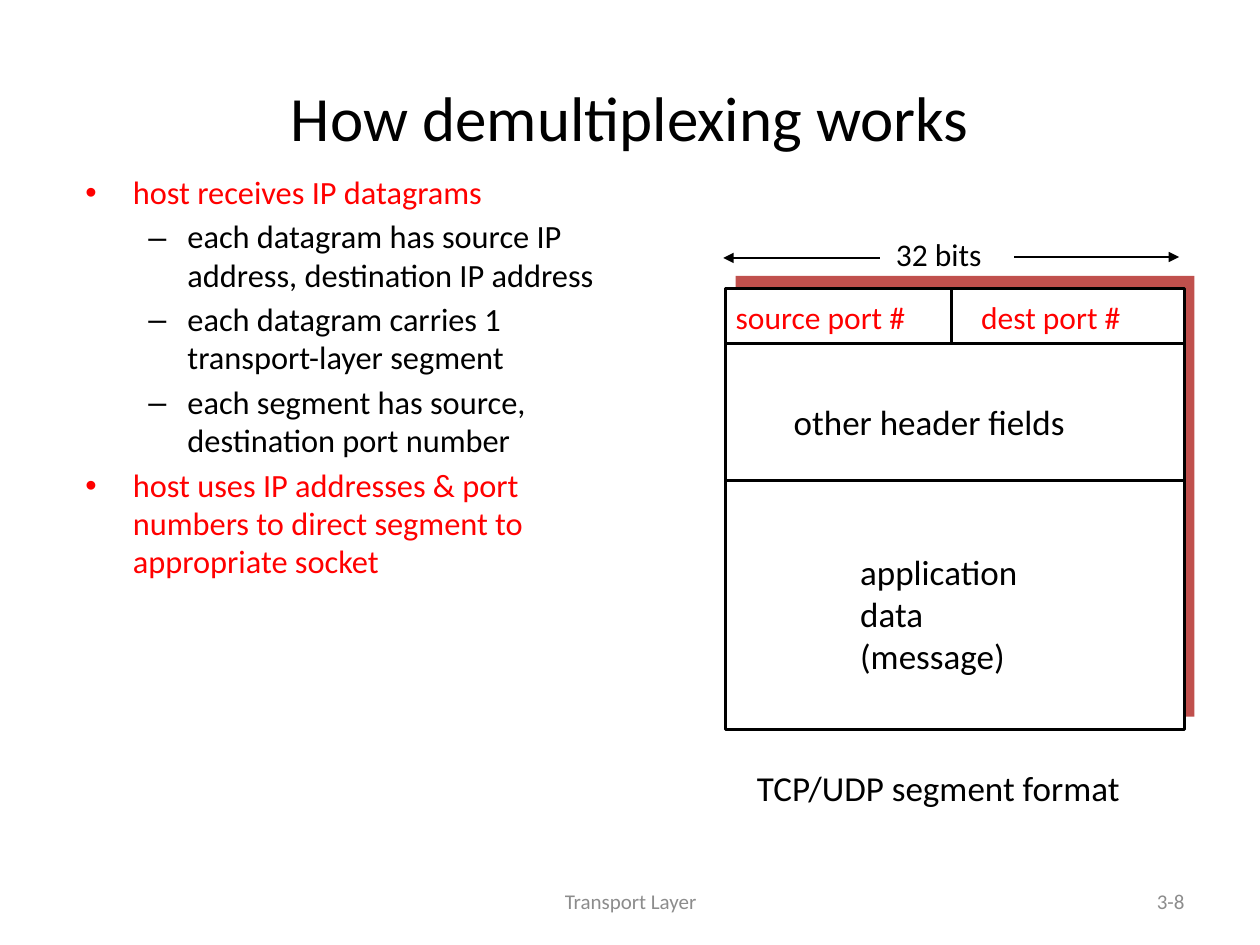
from lxml.etree import SubElement
from pptx import Presentation
from pptx.dml.color import RGBColor
from pptx.enum.shapes import MSO_CONNECTOR, MSO_SHAPE
from pptx.enum.text import MSO_ANCHOR, PP_ALIGN
from pptx.oxml.ns import qn
from pptx.util import Cm, Pt

COLORS = {
    "black": "000000",
    "white": "FFFFFF",
    "red": "FF0000",
    "brick": "C0504D",
    "gray": "8C8C8C",
}


class SlideBuilder:
    font = "Calibri"
    line_width = Pt(1.5)
    # Per outline level: bullet, left indent and hanging indent in cm
    levels = (("•", 0.96, 0.96), ("–", 2.06, 0.79))

    def __init__(self, slide):
        self.slide = slide

    def color(self, name):
        return RGBColor.from_string(COLORS[name])

    def frame(self, left, top, width, height, anchor=MSO_ANCHOR.TOP):
        box = self.slide.shapes.add_textbox(Cm(left), Cm(top), Cm(width), Cm(height))
        box.text_frame.word_wrap = True
        box.text_frame.vertical_anchor = anchor
        return box.text_frame

    def paragraph(self, frame, index, text, size, color):
        paragraph = frame.add_paragraph() if index else frame.paragraphs[0]
        run = paragraph.add_run()
        run.text = text
        run.font.name = self.font
        run.font.size = Pt(size)
        run.font.color.rgb = self.color(color)
        return paragraph

    def text(self, left, top, width, height, lines, size, color="black",
             align=PP_ALIGN.LEFT, anchor=MSO_ANCHOR.TOP):
        frame = self.frame(left, top, width, height, anchor)
        for index, line in enumerate(lines):
            self.paragraph(frame, index, line, size, color).alignment = align

    def bullets(self, left, top, width, height, items, size):
        frame = self.frame(left, top, width, height)
        for index, (level, text) in enumerate(items):
            color = "black" if level else "red"
            paragraph = self.paragraph(frame, index, text, size, color)
            paragraph.level = level
            paragraph.line_spacing = 0.98
            paragraph.space_before = Pt(size * 0.2)
            character, margin, hanging = self.levels[level]
            properties = paragraph._p.get_or_add_pPr()
            properties.set("marL", str(Cm(margin)))
            properties.set("indent", str(-Cm(hanging)))
            SubElement(properties, qn("a:buFont"), typeface="Arial")
            SubElement(properties, qn("a:buChar"), char=character)

    def rectangle(self, left, top, width, height, fill, line=None):
        shape = self.slide.shapes.add_shape(
            MSO_SHAPE.RECTANGLE, Cm(left), Cm(top), Cm(width), Cm(height))
        shape.shadow.inherit = False
        shape.fill.solid()
        shape.fill.fore_color.rgb = self.color(fill)
        if line:
            shape.line.color.rgb = self.color(line)
            shape.line.width = self.line_width
        else:
            shape.line.fill.background()

    def line(self, x1, y1, x2, y2, arrow=False):
        connector = self.slide.shapes.add_connector(
            MSO_CONNECTOR.STRAIGHT, Cm(x1), Cm(y1), Cm(x2), Cm(y2))
        connector.line.color.rgb = self.color("black")
        connector.line.width = self.line_width
        if arrow:
            SubElement(connector.line._get_or_add_ln(), qn("a:tailEnd"), type="triangle")
        SubElement(connector._element.spPr, qn("a:effectLst"))


def main():
    presentation = Presentation()
    presentation.slide_width, presentation.slide_height = Cm(25.4), Cm(19.05)
    builder = SlideBuilder(presentation.slides.add_slide(presentation.slide_layouts[6]))

    # Footer and slide number
    builder.text(8.69, 17.65, 8.05, 1.02, ["Transport Layer"], 12, "gray",
                 PP_ALIGN.CENTER, MSO_ANCHOR.MIDDLE)
    builder.text(18.21, 17.65, 5.92, 1.02, ["3-8"], 12, "gray",
                 PP_ALIGN.RIGHT, MSO_ANCHOR.MIDDLE)

    # Title and outline
    builder.text(1.27, 0.76, 22.86, 3.18, ["How demultiplexing works"], 36,
                 align=PP_ALIGN.CENTER, anchor=MSO_ANCHOR.MIDDLE)
    builder.bullets(1.47, 3.38, 11.43, 7.75, [
        (0, "host receives IP datagrams"),
        (1, "each datagram has source IP address, destination IP address"),
        (1, "each datagram carries 1 transport-layer segment"),
        (1, "each segment has source, destination port number"),
        (0, "host uses IP addresses & port numbers to direct segment to appropriate socket"),
    ], 18.5)

    # Segment box with its backing panel
    left, top, width, height = 14.63, 5.82, 9.25, 8.89
    builder.rectangle(left + 0.2, top - 0.26, width, height, "brick")
    builder.rectangle(left, top, width, height, "white", "black")

    # Dividers between the segment fields
    ports_bottom, header_bottom, middle = 6.93, 9.68, 19.18
    for y in (ports_bottom, header_bottom):
        builder.line(left, y, left + width, y)
    builder.line(middle, top, middle, ports_bottom)

    # Width arrows
    builder.line(20.45, 5.18, 23.77, 5.18, arrow=True)
    builder.line(17.73, 5.2, 14.58, 5.2, arrow=True)

    # Labels
    for x, y, label_width, lines, size, color in (
        (17.81, 4.62, 2.64, ["32 bits"], 18, "black"),
        (14.58, 5.89, 4.65, ["source port #"], 18, "red"),
        (19.53, 5.89, 4.04, ["dest port #"], 18, "red"),
        (15.75, 7.95, 6.96, ["other header fields"], 20, "black"),
        (17.09, 10.97, 4.01, ["application", "data", "(message)"], 20, "black"),
        (15.01, 15.32, 9.02, ["TCP/UDP segment format"], 20, "black"),
    ):
        builder.text(x, y, label_width, 1.05 * len(lines), lines, size, color)

    presentation.save("out.pptx")


if __name__ == "__main__":
    main()
